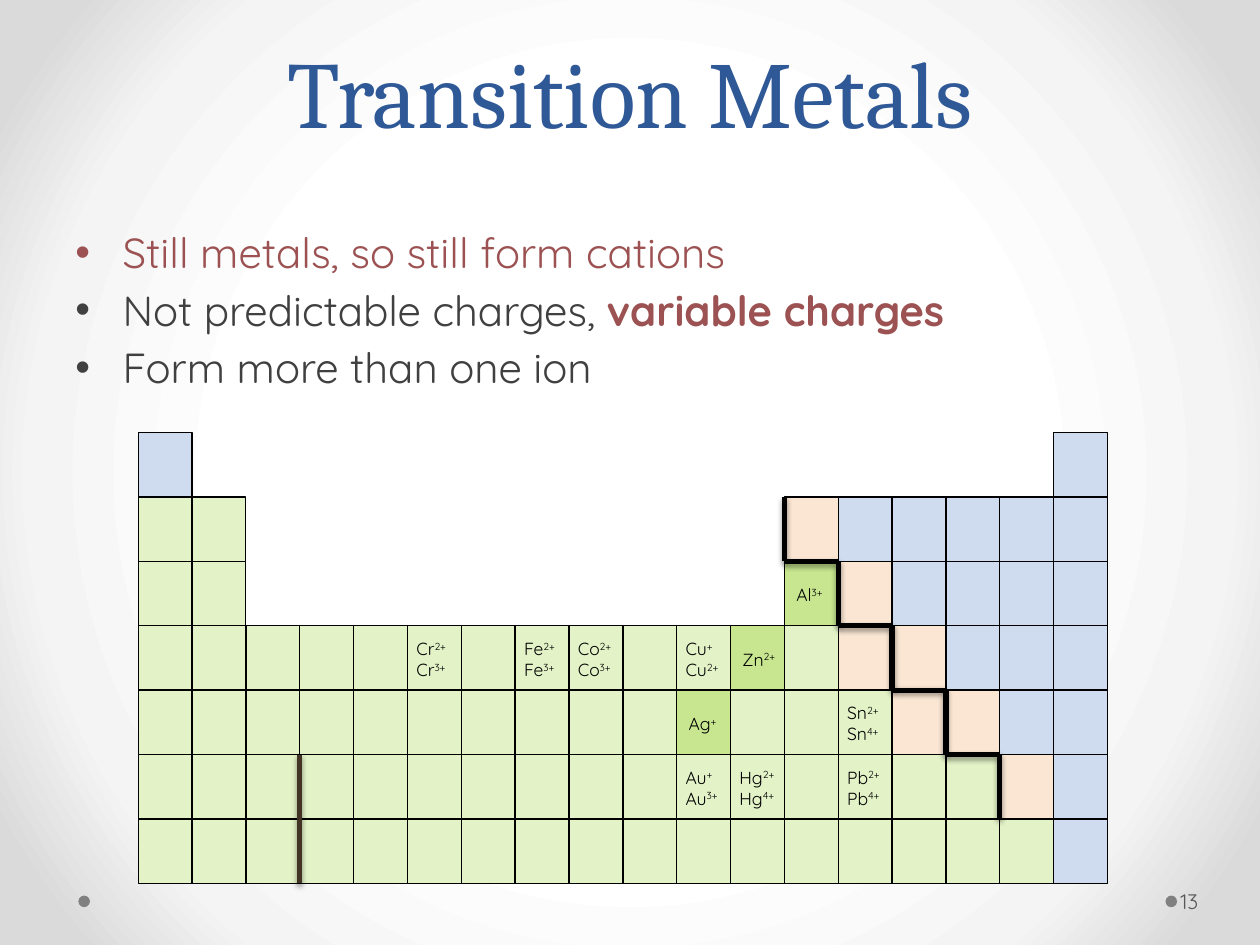
from dataclasses import dataclass

from lxml import etree
from pptx import Presentation
from pptx.dml.color import RGBColor
from pptx.enum.shapes import MSO_CONNECTOR, MSO_SHAPE
from pptx.enum.text import MSO_ANCHOR, PP_ALIGN
from pptx.oxml.ns import qn
from pptx.util import Pt

RECTANGLE, OVAL = MSO_SHAPE.RECTANGLE, MSO_SHAPE.OVAL
STRAIGHT = MSO_CONNECTOR.STRAIGHT
BOTTOM, MIDDLE = MSO_ANCHOR.BOTTOM, MSO_ANCHOR.MIDDLE
CENTER = PP_ALIGN.CENTER


@dataclass(frozen=True)
class Theme:
    title_font: str = "Cambria"
    body_font: str = "Quicksand"
    title_size: int = 54
    body_size: int = 24
    ion_size: int = 10
    number_size: int = 12
    title: str = "2F5897"
    body: str = "404040"
    accent: str = "9C5252"
    ink: str = "000000"
    number: str = "595959"
    dot: str = "808080"
    divider: str = "423324"
    metal: str = "E3F2C7"
    fixed_charge: str = "C7E68F"
    metalloid: str = "FAE6D3"
    nonmetal: str = "CFDCF0"
    backdrop: tuple = ((50, "FFFFFF"), (76, "F4F4F4"), (92, "DADADA"))


theme = Theme()


def style(run, font, size, color, bold=False):
    run.font.name = font
    run.font.size = Pt(size)
    run.font.color.rgb = RGBColor.from_string(color)
    run.font.bold = bold


def add_heavy_line(x1, y1, x2, y2, color):
    """Draw a 3 pt line with a soft shadow straight below it."""
    line = slide.shapes.add_connector(STRAIGHT, Pt(x1), Pt(y1), Pt(x2), Pt(y2))
    line.line.color.rgb = RGBColor.from_string(color)
    line.line.width = Pt(3)
    effects = etree.SubElement(line._element.spPr, qn("a:effectLst"))
    shadow = etree.SubElement(effects, qn("a:outerShdw"), blurRad=str(Pt(3.1)),
                              dist=str(Pt(1.6)), dir="5400000", rotWithShape="0")
    shade = etree.SubElement(shadow, qn("a:srgbClr"), val=theme.ink)
    etree.SubElement(shade, qn("a:alpha"), val="38000")


prs = Presentation()
prs.slide_width, prs.slide_height = Pt(720), Pt(540)
slide = prs.slides.add_slide(prs.slide_layouts[5])

# Radial background
slide.background.fill.gradient()
gradient = slide.element.find(".//" + qn("a:gradFill"))
for child in list(gradient):
    gradient.remove(child)
stops = etree.SubElement(gradient, qn("a:gsLst"))
for position, color in theme.backdrop:
    stop = etree.SubElement(stops, qn("a:gs"), pos=str(position * 1000))
    etree.SubElement(stop, qn("a:srgbClr"), val=color)
circle = etree.SubElement(gradient, qn("a:path"), path="circle")
etree.SubElement(circle, qn("a:fillToRect"), l="50000", t="50000", r="50000", b="50000")

# Footer dots
for dot_left in (666, 44.8):
    dot = slide.shapes.add_shape(OVAL, Pt(dot_left), Pt(511.8), Pt(6.6), Pt(6.6))
    dot.shadow.inherit = False
    dot.fill.solid()
    dot.fill.fore_color.rgb = RGBColor.from_string(theme.dot)
    dot.line.fill.background()

# Title
title = slide.shapes.title
title.left, title.top, title.width, title.height = Pt(36), Pt(0), Pt(648), Pt(88)
title.text_frame.text = "Transition Metals"
title.text_frame.vertical_anchor = BOTTOM
heading = title.text_frame.paragraphs[0]
heading.alignment = CENTER
heading.line_spacing = Pt(58)
style(heading.runs[0], theme.title_font, theme.title_size, theme.title)

# Key points: (text, color, bold) for each run
key_points = [
    [("Still metals, so still form cations", theme.accent, False)],
    [("Not predictable charges, ", theme.body, False),
     ("variable charges", theme.accent, True)],
    [("Form more than one ion", theme.body, False)],
]
points = slide.shapes.add_textbox(Pt(36), Pt(126), Pt(648), Pt(110)).text_frame
points.word_wrap = True
for index, parts in enumerate(key_points):
    point = points.add_paragraph() if index else points.paragraphs[0]
    point.space_before = Pt(4)
    for text, color, bold in parts:
        run = point.add_run()
        run.text = text
        style(run, theme.body_font, theme.body_size, color, bold)
    properties = point._p.get_or_add_pPr()
    properties.set("marL", str(Pt(27)))
    properties.set("indent", str(Pt(-27)))
    etree.SubElement(properties, qn("a:buFont"), typeface="Arial")
    etree.SubElement(properties, qn("a:buChar"), char="•")

# Periodic table: one letter per element, a dot where there is none
GRID_LEFT, GRID_TOP, CELL_W, CELL_H = 79, 247.2, 30.77, 36.8
periods = [
    "N................N",
    "MM..........SNNNNN",
    "MM..........FSNNNN",
    "MMMMMMMMMMMFMSSNNN",
    "MMMMMMMMMMFMMMSSNN",
    "MMMMMMMMMMMMMMMMSN",
    "MMMMMMMMMMMMMMMMMN",
]
element_fills = {"M": theme.metal, "F": theme.fixed_charge,
                 "S": theme.metalloid, "N": theme.nonmetal}
column_x = [GRID_LEFT + CELL_W * i for i in range(19)]
row_y = [GRID_TOP + CELL_H * i for i in range(8)]

for y, period in zip(row_y, periods):
    for x, kind in zip(column_x, period):
        if kind == ".":
            continue
        cell = slide.shapes.add_shape(RECTANGLE, Pt(x), Pt(y), Pt(CELL_W), Pt(CELL_H))
        cell.shadow.inherit = False
        cell.fill.solid()
        cell.fill.fore_color.rgb = RGBColor.from_string(element_fills[kind])
        cell.line.color.rgb = RGBColor.from_string(theme.ink)
        cell.line.width = Pt(0.75)

# Staircase between metals and nonmetals
for step in range(5):
    x, top, bottom = column_x[12 + step], row_y[1 + step], row_y[2 + step]
    add_heavy_line(x, top, x, bottom, theme.ink)
    if step < 4:
        add_heavy_line(x, bottom, column_x[13 + step], bottom, theme.ink)

add_heavy_line(column_x[3], row_y[5], column_x[3], row_y[7], theme.divider)

# Ions: (column, row, symbol, charges)
ions = [
    (13, 4, "Sn", ["2+", "4+"]), (13, 5, "Pb", ["2+", "4+"]),
    (11, 5, "Hg", ["2+", "4+"]), (10, 5, "Au", ["+", "3+"]),
    (10, 3, "Cu", ["+", "2+"]), (8, 3, "Co", ["2+", "3+"]),
    (7, 3, "Fe", ["2+", "3+"]), (5, 3, "Cr", ["2+", "3+"]),
    (12, 2, "Al", ["3+"]), (11, 3, "Zn", ["2+"]), (10, 4, "Ag", ["+"]),
]
for column, row, symbol, charges in ions:
    height = 7.2 + 12.4 * len(charges)
    x = column_x[column] - (2 if len(charges) > 1 else 0.3)
    y = row_y[row] + 19.3 - height / 2
    label = slide.shapes.add_textbox(Pt(x), Pt(y), Pt(37.4), Pt(height)).text_frame
    label.word_wrap = True
    for index, charge in enumerate(charges):
        ion = label.add_paragraph() if index else label.paragraphs[0]
        for text in (symbol, charge):
            run = ion.add_run()
            run.text = text
            style(run, theme.body_font, theme.ion_size, theme.ink)
        run.font._element.set("baseline", "30000")

# Slide number
number = slide.shapes.add_textbox(Pt(672.5), Pt(500.4), Pt(44), Pt(28.8)).text_frame
number.word_wrap = True
number.vertical_anchor = MIDDLE
number.margin_left, number.margin_right = Pt(2), Pt(3.6)
number.text = "13"
style(number.paragraphs[0].runs[0], theme.body_font, theme.number_size, theme.number)

prs.save("out.pptx")
